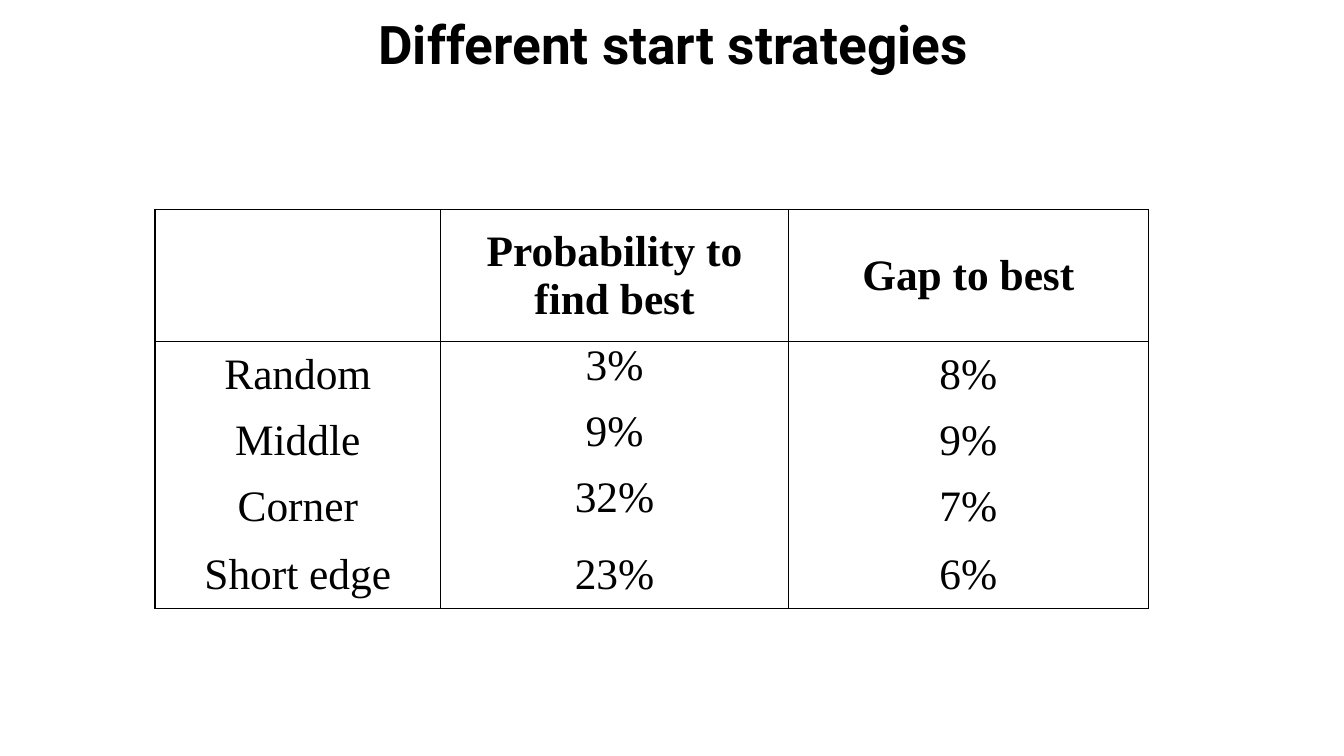
from lxml.etree import SubElement
from pptx import Presentation
from pptx.dml.color import RGBColor
from pptx.enum.text import MSO_ANCHOR, PP_ALIGN
from pptx.oxml.ns import qn
from pptx.util import Pt

COLORS = {"ink": "000000"}
INK = RGBColor.from_string(COLORS["ink"])


def add_run(para, text, font, size, bold):
    para.alignment = PP_ALIGN.CENTER
    run = para.add_run()
    run.text = text
    run.font.name = font
    run.font.size = Pt(size)
    run.font.bold = bold
    run.font.color.rgb = INK


def set_edge(cell, side, drawn):
    """Draw or hide one border of a cell; side is L, R, T or B."""
    line = SubElement(cell._tc.get_or_add_tcPr(), qn(f"a:ln{side}"), w=str(Pt(1)))
    if drawn:
        fill = SubElement(line, qn("a:solidFill"))
        SubElement(fill, qn("a:srgbClr"), val=COLORS["ink"])
    else:
        SubElement(line, qn("a:noFill"))


deck = Presentation()
deck.slide_width, deck.slide_height = Pt(960), Pt(540)
slide = deck.slides.add_slide(deck.slide_layouts[5])

title = slide.shapes.title
title.left, title.top, title.width, title.height = Pt(144.7), Pt(10), Pt(672.5), Pt(48)
title.text_frame.vertical_anchor = MSO_ANCHOR.MIDDLE
title.text_frame.word_wrap = True
head = title.text_frame.paragraphs[0]
head.line_spacing = 0.9
add_run(head, "Different start strategies", "Roboto", 38, True)

rows = [
    ("", "Probability to find best", "Gap to best"),
    ("Random", "3%", "8%"),
    ("Middle", "9%", "9%"),
    ("Corner", "32%", "7%"),
    ("Short edge", "23%", "6%"),
]
widths = [204, 248.5, 257]
heights = [94.3, 47.3, 47.3, 47.3, 49]
last = len(rows) - 1

table = slide.shapes.add_table(
    len(rows), len(widths), Pt(110.7), Pt(149.7), Pt(sum(widths)), Pt(sum(heights))
).table
table.horz_banding = False
for col, width in zip(table.columns, widths):
    col.width = Pt(width)
for row, height in zip(table.rows, heights):
    row.height = Pt(height)

for r, texts in enumerate(rows):
    edges = {"L": True, "R": True, "T": r <= 1, "B": r in (0, last)}
    for c, text in enumerate(texts):
        cell = table.cell(r, c)
        cell.margin_left = cell.margin_right = Pt(7.2)
        cell.margin_top = cell.margin_bottom = 0
        # The first three probabilities sit at the top of their cells
        high = c == 1 and 0 < r < last
        cell.vertical_anchor = MSO_ANCHOR.TOP if high else MSO_ANCHOR.MIDDLE
        for side, drawn in edges.items():
            set_edge(cell, side, drawn)
        cell.fill.background()
        if text:
            para = cell.text_frame.paragraphs[0]
            add_run(para, text, "Times New Roman", 31, r == 0)

deck.save("out.pptx")
